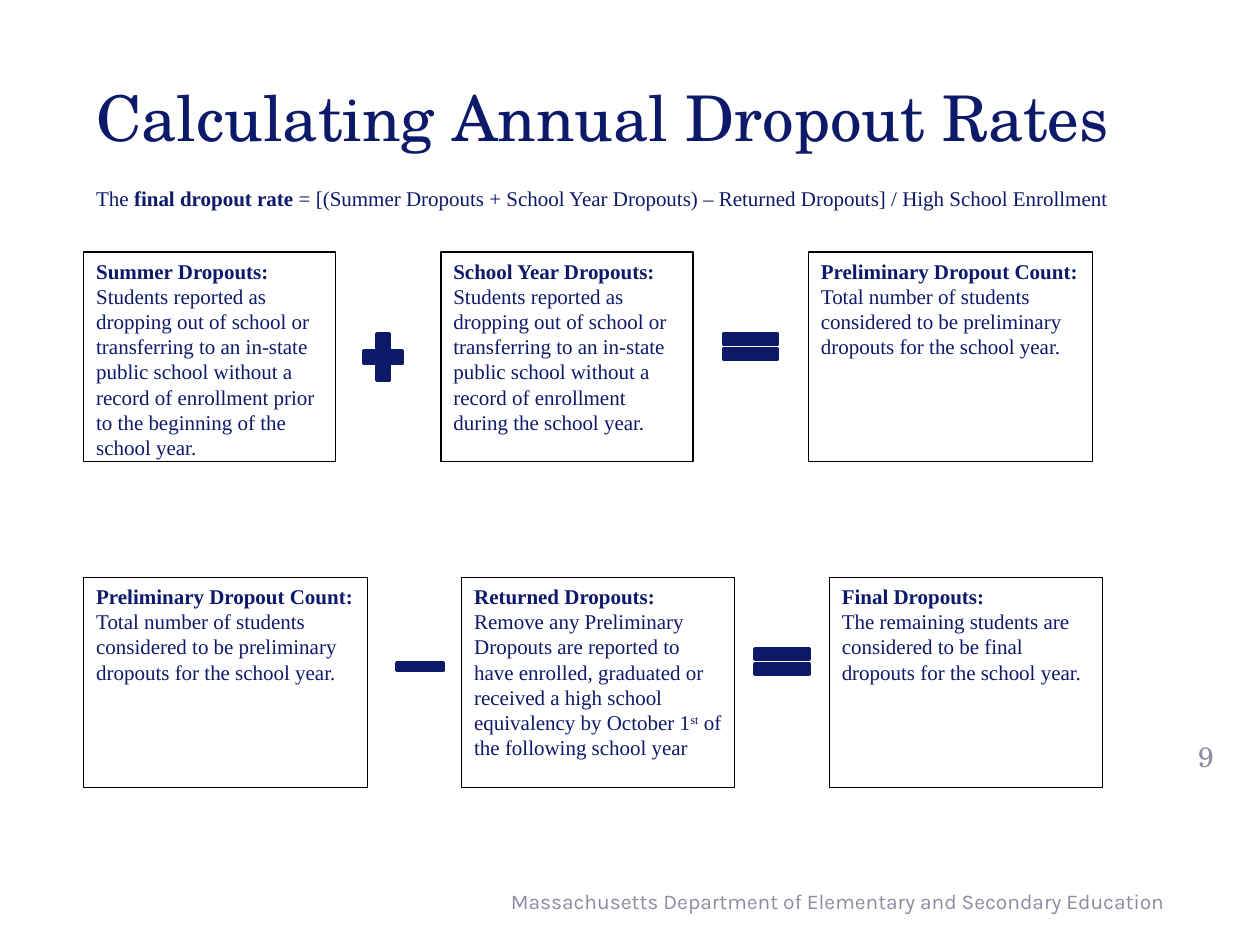
from pptx import Presentation
from pptx.dml.color import RGBColor
from pptx.enum.shapes import MSO_SHAPE as SH
from pptx.enum.text import MSO_ANCHOR, PP_ALIGN
from pptx.util import Cm, Pt

NAVY = RGBColor(0x0D, 0x19, 0x69)
GRAY = RGBColor(0x8C, 0x8C, 0xA1)
BLACK = RGBColor(0, 0, 0)
WHITE = RGBColor(0xFF, 0xFF, 0xFF)
SERIF, HEAD, SANS = "Times New Roman", "TeX Gyre Schola", "Karla"

# Content: runs are (text, style), style "b" = bold, "sup" = superscript
TITLE = "Calculating Annual Dropout Rates"
FORMULA = [
    ("The ", ""), ("final dropout rate", "b"),
    (" = [(Summer Dropouts + School Year Dropouts) – Returned Dropouts]"
     " / High School Enrollment", ""),
]
FOOTER = "Massachusetts Department of Elementary and Secondary Education"
PAGE = "9"

SUMMER = ("Summer Dropouts:", [
    ("Students reported as dropping out of school or transferring to an in-state "
     "public school without a record of enrollment prior to the beginning of the "
     "school year.", "")])
SCHOOL_YEAR = ("School Year Dropouts:", [
    ("Students reported as dropping out of school or transferring to an in-state "
     "public school without a record of enrollment during the school year.", "")])
PRELIMINARY = ("Preliminary Dropout Count:", [
    ("Total number of students considered to be preliminary dropouts for the "
     "school year.", "")])
RETURNED = ("Returned Dropouts:", [
    ("Remove any Preliminary Dropouts are reported to have enrolled, graduated or "
     "received a high school equivalency by October 1", ""),
    ("st", "sup"), (" of the following school year", "")])
FINAL = ("Final Dropouts:", [
    ("The remaining students are considered to be final dropouts for the school "
     "year.", "")])

# Equations in cm: top, boxes (left, width, content),
# operators (shape, left, offset from top)
BOX_H = 4.23
EQUATIONS = [
    (5.08,
     [(1.69, 5.08, SUMMER), (8.89, 5.08, SCHOOL_YEAR), (16.3, 5.72, PRELIMINARY)],
     [(SH.MATH_PLUS, 7.2, 1.48), (SH.MATH_EQUAL, 14.39, 1.48)]),
    (11.64,
     [(1.69, 5.72, PRELIMINARY), (9.31, 5.5, RETURNED), (16.72, 5.5, FINAL)],
     [(SH.MATH_MINUS, 7.83, 1.48), (SH.MATH_EQUAL, 15.03, 1.27)]),
]
OPERATOR_SIZE = {
    SH.MATH_PLUS: (1.06, 1.27),
    SH.MATH_MINUS: (1.27, 0.64),
    SH.MATH_EQUAL: (1.48, 0.85),
}


def add_runs(p, runs, font=SERIF, size=12, color=NAVY, align=PP_ALIGN.LEFT):
    p.alignment = align
    for text, style in runs:
        r = p.add_run()
        r.text = text
        r.font.name, r.font.size = font, Pt(size)
        r.font.color.rgb = color
        r.font.bold = style == "b"
        if style == "sup":
            r.font._element.set("baseline", "30000")


def add_text(shapes, box, runs, **fmt):
    tf = shapes.add_textbox(*map(Cm, box)).text_frame
    tf.word_wrap = True
    tf.vertical_anchor = MSO_ANCHOR.MIDDLE
    add_runs(tf.paragraphs[0], runs, **fmt)


def add_preset(shapes, kind, box, fill, line, width):
    sp = shapes.add_shape(kind, *map(Cm, box))
    sp.shadow.inherit = False
    sp.fill.solid()
    sp.fill.fore_color.rgb = fill
    sp.line.color.rgb = line
    sp.line.width = Pt(width)
    return sp


def add_box(shapes, box, heading, body):
    tf = add_preset(shapes, SH.RECTANGLE, box, WHITE, BLACK, 0.75).text_frame
    tf.word_wrap = True
    tf.vertical_anchor = MSO_ANCHOR.TOP
    add_runs(tf.paragraphs[0], [(heading, "b")])
    add_runs(tf.add_paragraph(), body)


def main():
    prs = Presentation()
    prs.slide_width, prs.slide_height = Cm(25.4), Cm(19.05)
    s = prs.slides.add_slide(prs.slide_layouts[5])

    # Title
    title = s.shapes.title
    title.left, title.top, title.width, title.height = map(
        Cm, (1.69, 0.76, 22.01, 3.18))
    title.text_frame.vertical_anchor = MSO_ANCHOR.MIDDLE
    add_runs(title.text_frame.paragraphs[0], [(TITLE, "")], font=HEAD, size=36)

    # Footer, page number and formula
    add_text(s.shapes, (8.69, 17.65, 15.04, 1.02), [(FOOTER, "")],
             font=SANS, color=GRAY, align=PP_ALIGN.RIGHT)
    add_text(s.shapes, (23.57, 14.61, 1.48, 1.27), [(PAGE, "")],
             font=HEAD, size=16, color=GRAY, align=PP_ALIGN.CENTER)
    add_text(s.shapes, (1.69, 3.61, 22.23, 0.76), FORMULA)

    # One group per equation
    for top, boxes, operators in EQUATIONS:
        shapes = s.shapes.add_group_shape().shapes
        for left, width, (heading, body) in boxes:
            add_box(shapes, (left, top, width, BOX_H), heading, body)
        for kind, left, offset in operators:
            add_preset(shapes, kind, (left, top + offset, *OPERATOR_SIZE[kind]),
                       NAVY, NAVY, 2)

    prs.save("out.pptx")


if __name__ == "__main__":
    main()
